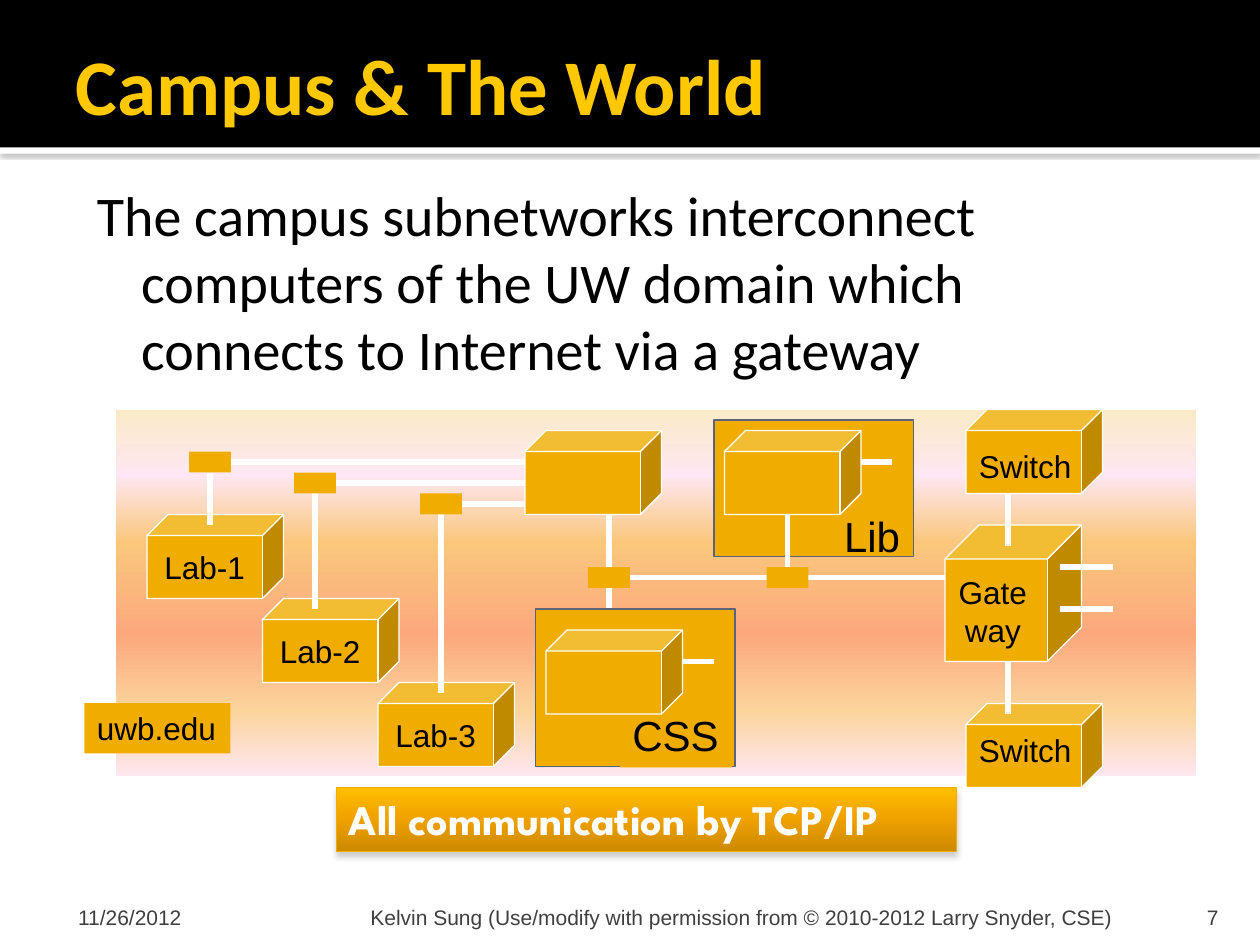
from lxml import etree
from pptx import Presentation
from pptx.dml.color import RGBColor
from pptx.enum import shapes, text
from pptx.oxml.ns import qn
from pptx.util import Inches, Pt

BLACK = RGBColor(0, 0, 0)
WHITE = RGBColor(255, 255, 255)
GOLD = RGBColor(0xF0, 0xAD, 0x00)
TITLE = RGBColor(0xFF, 0xC8, 0x00)
SLATE = RGBColor(0x5A, 0x63, 0x78)
GREY = RGBColor(0x3F, 0x3F, 0x3F)
RECT, CUBE = shapes.MSO_SHAPE.RECTANGLE, shapes.MSO_SHAPE.CUBE
TOP, MID, LOW = (text.MSO_ANCHOR.TOP, text.MSO_ANCHOR.MIDDLE,
                 text.MSO_ANCHOR.BOTTOM)
LEFT, MIDDLE, RIGHT = (text.PP_ALIGN.LEFT, text.PP_ALIGN.CENTER,
                       text.PP_ALIGN.RIGHT)
PANEL = [(0, "FBEAC7"), (18, "FEE7F2"), (36, "FAC77D"),
         (61, "FBA97D"), (82, "FBD49C"), (100, "FEE7F2")]
BANNER = [(0, "FFBF00"), (45, "F1A300"), (100, "CC8900")]


def grid(*nums):
    """Turn twelfths of an inch, the unit of the diagram, into inches."""
    return [n / 12 for n in nums]


def write(shape, words, size, color=BLACK, font="Arial", bold=False,
          align=LEFT, anchor=TOP, pad=(0.1, 0.05, 0.1, 0.05), wrap=True):
    frame = shape.text_frame
    frame.word_wrap = wrap
    frame.auto_size = text.MSO_AUTO_SIZE.NONE
    frame.vertical_anchor = anchor
    (frame.margin_left, frame.margin_top,
     frame.margin_right, frame.margin_bottom) = map(Inches, pad)
    for i, line in enumerate(words.split("\n")):
        para = frame.add_paragraph() if i else frame.paragraphs[0]
        para.alignment = align
        run = para.add_run()
        run.text = line
        run.font.name, run.font.size, run.font.bold = font, Pt(size), bold
        run.font.color.rgb = color


def block(slide, kind, box, fill=GOLD, line=None, width=0.75):
    shape = slide.shapes.add_shape(kind, *map(Inches, box))
    shape.shadow.inherit = False
    if fill is not None:
        shape.fill.solid()
        shape.fill.fore_color.rgb = fill
    if line is None:
        shape.line.fill.background()
    else:
        shape.line.color.rgb = line
        shape.line.width = Pt(width)
    return shape


def cube(slide, x, y, w=13, h=8):
    return block(slide, CUBE, grid(x, y, w, h), line=WHITE)


def hub(slide, x, y):
    block(slide, RECT, grid(x, y, 4, 2))


def wire(slide, *ends):
    line = slide.shapes.add_connector(
        shapes.MSO_CONNECTOR.STRAIGHT, *map(Inches, grid(*ends)))
    line.line.color.rgb = WHITE
    line.line.width = Pt(3)
    props = line.element.find(qn("p:spPr"))
    etree.SubElement(props, qn("a:effectLst"))


def label(slide, words, box, size=18, **style):
    area = slide.shapes.add_textbox(*map(Inches, box))
    write(area, words, size, **style)
    return area


def shade(shape, stops):
    """Fill from top to bottom with (percent, colour) stops."""
    shape.fill.gradient()
    shape.fill.gradient_angle = 270
    items = shape.element.find(".//" + qn("a:gsLst"))
    for old in list(items):
        items.remove(old)
    for pos, color in stops:
        stop = etree.SubElement(items, qn("a:gs"), pos=str(pos * 1000))
        etree.SubElement(stop, qn("a:srgbClr"), val=color)


def drop(shape, alpha, blur, dist):
    """Cast a grey shadow straight down."""
    effects = shape.element.find(".//" + qn("a:effectLst"))
    cast = etree.SubElement(
        effects, qn("a:outerShdw"), blurRad=str(Pt(blur)),
        dist=str(Pt(dist)), dir="5400000", algn="t", rotWithShape="0")
    color = etree.SubElement(cast, qn("a:srgbClr"), val="808080")
    etree.SubElement(color, qn("a:alpha"), val=str(alpha * 1000))


def header(slide):
    title = slide.shapes.title
    strip = block(slide, RECT, (0, 1.17, 10, 0.05), WHITE)
    drop(strip, 60, 2.5, 0.8)
    band = block(slide, RECT, (0, 0, 10, 1.17), BLACK)
    for bar in (strip, band):
        title.element.addprevious(bar.element)
    title.left, title.top, title.width, title.height = map(
        Inches, (0.5, 0.17, 9, 1))
    write(title, "Campus & The World", 45, TITLE, "Calibri", True,
          anchor=MID, pad=(0.1, 0.05, 0.05, 0.05))


def body(slide):
    area = label(
        slide, "The campus subnetworks interconnect computers of the UW "
        "domain which connects to Internet via a gateway",
        (0.58, 1.33, 8.67, 4.5), 32, font="Calibri",
        pad=(0.06, 0.1, 0.1, 0.05))
    props = area.text_frame.paragraphs[0]._p.get_or_add_pPr()
    props.set("marL", str(Inches(0.48)))
    props.set("indent", str(Inches(-0.35)))


def labs(slide):
    for i, x in enumerate((18, 28, 40)):
        y = 43 + 2 * i
        lab = cube(slide, 14 + 11 * i, 49 + 8 * i)
        write(lab, f"Lab-{i + 1}", 18, align=MIDDLE, anchor=MID, wrap=False)
        wire(slide, x + 2, 50 + 8 * i, x + 2, y + 2)
        wire(slide, x + 4, y + 1, 58, y + 1)
        hub(slide, x, y)
    cube(slide, 50, 41)


def subnets(slide):
    wire(slide, 58, 49, 58, 61)
    block(slide, RECT, grid(51, 58, 19, 15), line=SLATE)
    tag = block(slide, RECT, (4.92, 5.58, 0.89, 0.51))
    write(tag, "CSS", 24, wrap=False)
    wire(slide, 64, 63, 68, 63)
    cube(slide, 52, 60)

    block(slide, RECT, grid(68, 40, 19, 13), line=SLATE)
    label(slide, "Lib", (6.6, 4, 0.65, 0.51), 24, wrap=False)
    wire(slide, 81, 44, 85, 44)
    cube(slide, 69, 41)

    wire(slide, 58, 55, 98, 55)
    wire(slide, 75, 54, 75, 49)
    for x in (56, 73):
        hub(slide, x, 54)


def gateway(slide):
    cube(slide, 90, 50, 13, 13)
    label(slide, "Gate\nway", (7.42, 4.5, 0.92, 0.7), align=MIDDLE)
    for y, top, ends in ((39, 3.5, (47, 52)), (67, 5.75, (63, 68))):
        cube(slide, 92, y)
        wire(slide, 96, ends[0], 96, ends[1])
        label(slide, "Switch", (7.67, top, 0.94, 0.4), wrap=False)
    for y in (54, 58):
        wire(slide, 101, y, 106, y)


def footer(slide):
    for words, x, w, pad, align in (
            ("11/26/2012", 0.5, 2.33, 0.12, LEFT),
            ("7", 8.97, 0.8, 0.1, RIGHT),
            ("Kelvin Sung (Use/modify with permission from "
             "© 2010-2012 Larry Snyder, CSE)", 2.89, 6.02, 0.05, LEFT)):
        label(slide, words, (x, 7.08, w, 0.3), 12, color=GREY, align=align,
              anchor=LOW, pad=(pad, 0.05, min(pad, 0.1), 0))


def main():
    deck = Presentation()
    deck.slide_width, deck.slide_height = Inches(10), Inches(7.5)
    slide = deck.slides.add_slide(deck.slide_layouts[5])
    header(slide)
    body(slide)
    banner = block(slide, RECT, (2.67, 6.25, 4.92, 0.51), None,
                   RGBColor(0xF0, 0xAC, 0x00), 0.5)
    shade(banner, BANNER)
    drop(banner, 38, 3.1, 2)
    write(banner, "All communication by TCP/IP", 24, WHITE,
          "League Spartan", True)
    panel = block(slide, RECT, grid(11, 39, 103, 35), None, WHITE)
    shade(panel, PANEL)
    labs(slide)
    subnets(slide)
    gateway(slide)
    domain = block(slide, RECT, (0.67, 5.58, 1.16, 0.4))
    write(domain, "uwb.edu", 18, wrap=False)
    footer(slide)
    deck.save("out.pptx")


if __name__ == "__main__":
    main()
